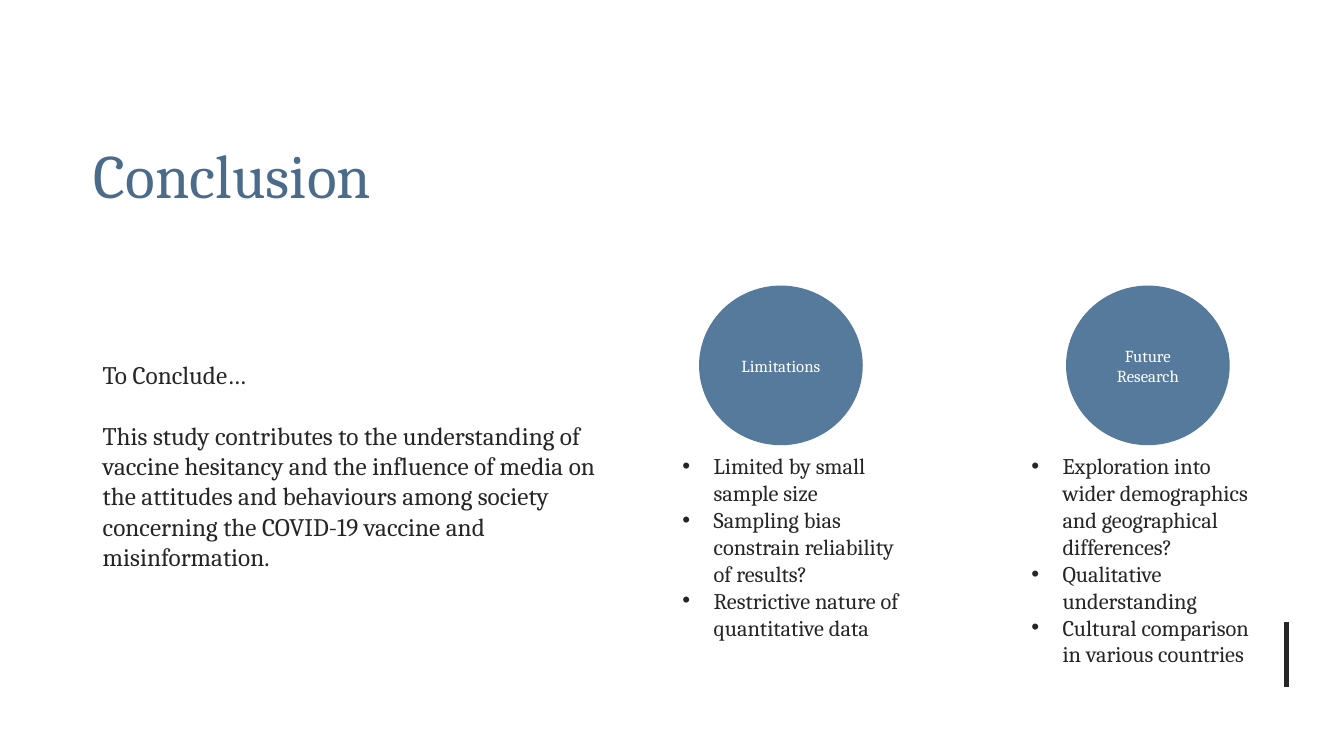
import pptx
import pptx.util
import pptx.dml.color
import pptx.enum.shapes
import pptx.enum.text
import pptx.oxml
import pptx.oxml.ns
from dataclasses import dataclass

Inches = pptx.util.Inches
Pt = pptx.util.Pt
Align = pptx.enum.text.PP_ALIGN
Anchor = pptx.enum.text.MSO_ANCHOR


@dataclass(frozen=True)
class Theme:
    font: str = "Cambria"
    title: str = "4B6B8B"
    disc: str = "567A9B"
    ink: str = "262626"
    light: str = "FFFFFF"
    head: int = 44
    body: int = 18
    item: int = 16
    label: int = 12


def color(code):
    return pptx.dml.color.RGBColor.from_string(code)


def apply(target, values):
    for name, value in values.items():
        setattr(target, name, value)


def box(*sizes):
    return [Inches(size) for size in sizes]


class Deck:
    def __init__(self, theme):
        self.theme = theme
        self.file = pptx.Presentation()
        apply(self.file, {"slide_width": Inches(13.33), "slide_height": Inches(7.5)})
        self.slide = self.file.slides.add_slide(self.file.slide_layouts[6])
        self.shapes = self.slide.shapes

    def fill(self, frame, lines, size, ink, anchor=Anchor.TOP, **style):
        """Fill a text frame, one paragraph per line; style holds paragraph values."""
        apply(frame, {"word_wrap": True, "vertical_anchor": anchor})
        for index, line in enumerate(lines):
            para = frame.add_paragraph() if index else frame.paragraphs[0]
            apply(para, style)
            run = para.add_run()
            run.text = line
            apply(run.font, {"name": self.theme.font, "size": Pt(size)})
            run.font.color.rgb = color(ink)

    def text(self, place, lines, size, ink, **style):
        frame = self.shapes.add_textbox(*box(*place)).text_frame
        self.fill(frame, lines, size, ink, **style)
        return frame

    def list(self, place, lines):
        frame = self.text(place, lines, self.theme.item, self.theme.ink)
        indent = Inches(0.31)
        for para in frame.paragraphs:
            props = para._p.get_or_add_pPr()
            props.set("marL", str(indent))
            props.set("indent", str(-indent))
            font = pptx.oxml.ns.qn("a:buFont")
            mark = pptx.oxml.ns.qn("a:buChar")
            props.append(props.makeelement(font, {"typeface": "Arial"}))
            props.append(props.makeelement(mark, {"char": "•"}))

    def disc(self, place, label):
        oval = pptx.enum.shapes.MSO_SHAPE.OVAL
        shape = self.shapes.add_shape(oval, *box(*place))
        shape.shadow.inherit = False
        shape.fill.solid()
        shape.fill.fore_color.rgb = color(self.theme.disc)
        shape.line.color.rgb = color(self.theme.disc)
        shape.line.width = Pt(1)
        self.fill(shape.text_frame, [label], self.theme.label, self.theme.light,
                  anchor=Anchor.MIDDLE, alignment=Align.CENTER)

    def rule(self, ends):
        kind = pptx.enum.shapes.MSO_CONNECTOR.STRAIGHT
        line = self.shapes.add_connector(kind, *box(*ends))
        line.line.color.rgb = color(self.theme.ink)
        line.line.width = Pt(3)
        props = line._element.spPr
        props.append(props.makeelement(pptx.oxml.ns.qn("a:effectLst"), {}))


def main():
    theme = Theme()
    deck = Deck(theme)
    deck.rule((12.76, 6.17, 12.76, 6.82))
    deck.text((0.83, 0.94, 11.35, 1.57), ["Conclusion"], theme.head, theme.title,
              anchor=Anchor.MIDDLE)
    topics = [
        ("Limitations", 6.94, 6.67, 2.52, [
            "Limited by small sample size",
            "Sampling bias constrain reliability of results?",
            "Restrictive nature of quantitative data",
        ]),
        ("Future Research", 10.58, 10.13, 3.06, [
            "Exploration into wider demographics and geographical differences?",
            "Qualitative understanding",
            "Cultural comparison in various countries",
        ]),
    ]
    for label, disc, left, height, points in topics:
        deck.disc((disc, 2.84, 1.61, 1.57), label)
        deck.list((left, 4.44, 2.51, height), points)
    deck.text((0.92, 3.52, 5.28, 2.22), [
        "To Conclude…",
        "This study contributes to the understanding of vaccine hesitancy and the "
        "influence of media on the attitudes and behaviours among society concerning "
        "the COVID-19 vaccine and misinformation.",
    ], theme.body, theme.ink, space_after=Pt(21.6))
    deck.file.save("out.pptx")


if __name__ == "__main__":
    main()
